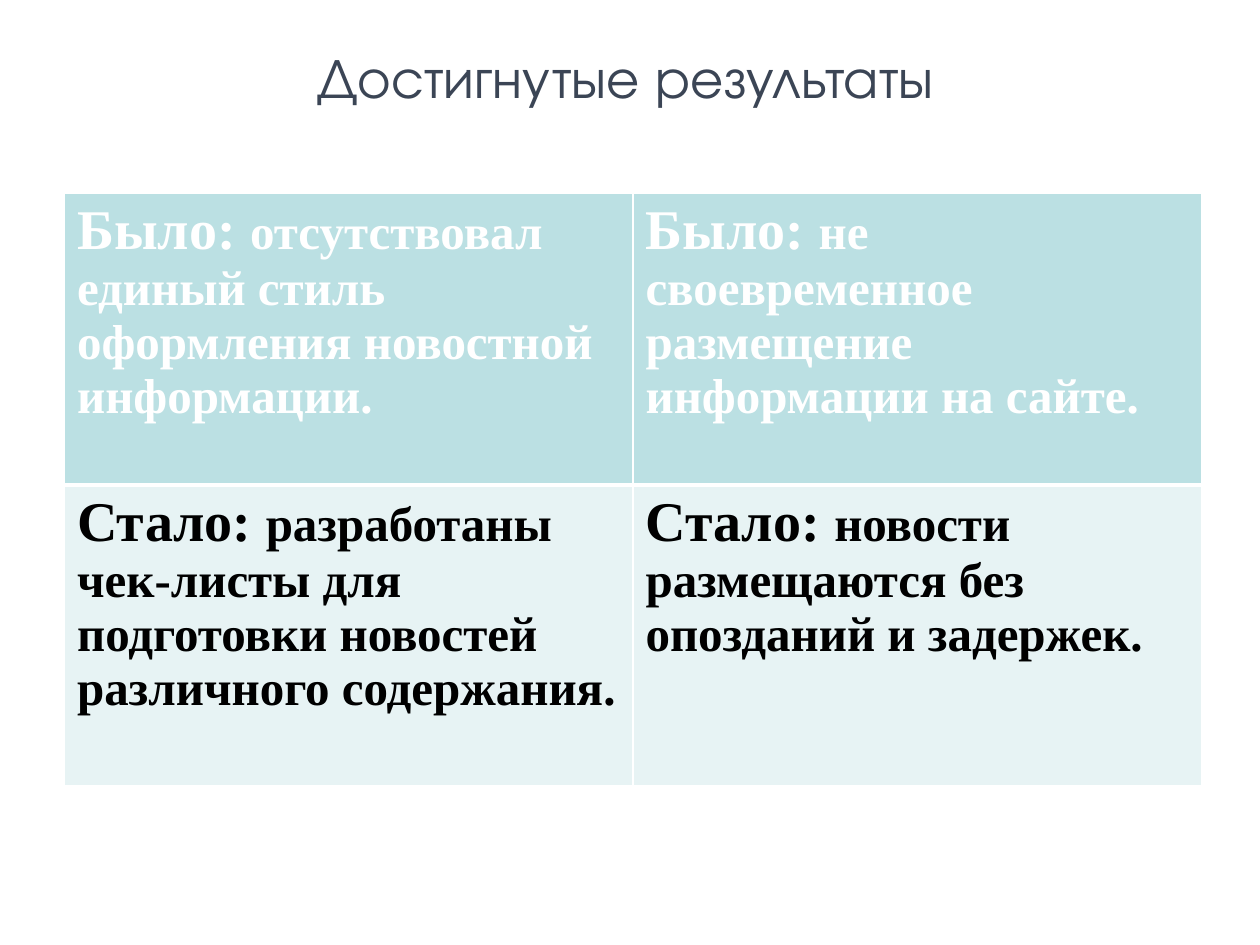
"""Builds the slide comparing the state of the news pages before and after."""
from dataclasses import dataclass

from lxml import etree
from pptx import Presentation
from pptx.dml.color import RGBColor
from pptx.enum.text import MSO_ANCHOR, PP_ALIGN
from pptx.oxml.ns import qn
from pptx.util import Cm, Pt

CENTER = PP_ALIGN.CENTER
MIDDLE = MSO_ANCHOR.MIDDLE


@dataclass(frozen=True)
class Theme:
    title_font: str = "TeX Gyre Adventor"
    body_font: str = "Times New Roman"
    title_color: str = "3B4555"
    border: str = "FFFFFF"
    large: int = 32
    body: int = 28
    thin: int = 1
    thick: int = 3


@dataclass(frozen=True)
class Row:
    label: str
    texts: tuple[str, ...]
    fill: str
    color: str
    height: float
    top_border: int
    bottom_border: int


THEME = Theme()
COLUMN_WIDTH = 11.46
ROWS = (
    Row("Было: ",
        ("отсутствовал единый стиль оформления новостной информации.",
         "не своевременное размещение информации на сайте."),
        "BBE0E3", "FFFFFF", 5.89, THEME.thin, THEME.thick),
    Row("Стало: ",
        ("разработаны чек-листы для подготовки новостей различного содержания.",
         "новости размещаются без опозданий и задержек."),
        "E7F3F4", "000000", 6.05, THEME.thick, THEME.thin),
)


def add_title(s, text: str) -> None:
    tf = s.shapes.add_textbox(Cm(5.89), Cm(0.71), Cm(13.46), Cm(1.63)).text_frame
    tf.word_wrap = False
    tf.vertical_anchor = MIDDLE
    p = tf.paragraphs[0]
    p.text = text
    p.alignment = CENTER
    p.font.name = THEME.title_font
    p.font.size = Pt(THEME.large)
    p.font.color.rgb = RGBColor.from_string(THEME.title_color)


def set_borders(cell, top: int, bottom: int) -> None:
    tc_pr = cell._tc.get_or_add_tcPr()
    widths = {"a:lnL": THEME.thin, "a:lnR": THEME.thin, "a:lnT": top, "a:lnB": bottom}
    for tag, width in widths.items():
        line = etree.SubElement(tc_pr, qn(tag), w=str(Pt(width)))
        fill = etree.SubElement(line, qn("a:solidFill"))
        etree.SubElement(fill, qn("a:srgbClr"), val=THEME.border)


def fill_cell(cell, row: Row, text: str) -> None:
    set_borders(cell, row.top_border, row.bottom_border)
    cell.fill.solid()
    cell.fill.fore_color.rgb = RGBColor.from_string(row.fill)
    p = cell.text_frame.paragraphs[0]
    p.font.name = THEME.body_font
    p.font.bold = True
    p.font.color.rgb = RGBColor.from_string(row.color)
    for part, size in ((row.label, THEME.large), (text, THEME.body)):
        r = p.add_run()
        r.text = part
        r.font.size = Pt(size)


def add_comparison(s, rows: tuple[Row, ...]) -> None:
    columns = len(rows[0].texts)
    height = sum(row.height for row in rows)
    table = s.shapes.add_table(len(rows), columns, Cm(1.3), Cm(3.89),
                               Cm(COLUMN_WIDTH * columns), Cm(height)).table
    for column in table.columns:
        column.width = Cm(COLUMN_WIDTH)
    for i, row in enumerate(rows):
        table.rows[i].height = Cm(row.height)
        for j, text in enumerate(row.texts):
            fill_cell(table.cell(i, j), row, text)


def main() -> None:
    prs = Presentation()
    prs.slide_width, prs.slide_height = Cm(25.4), Cm(19.05)
    s = prs.slides.add_slide(prs.slide_layouts[6])
    add_title(s, "Достигнутые результаты")
    add_comparison(s, ROWS)
    prs.save("out.pptx")


if __name__ == "__main__":
    main()
